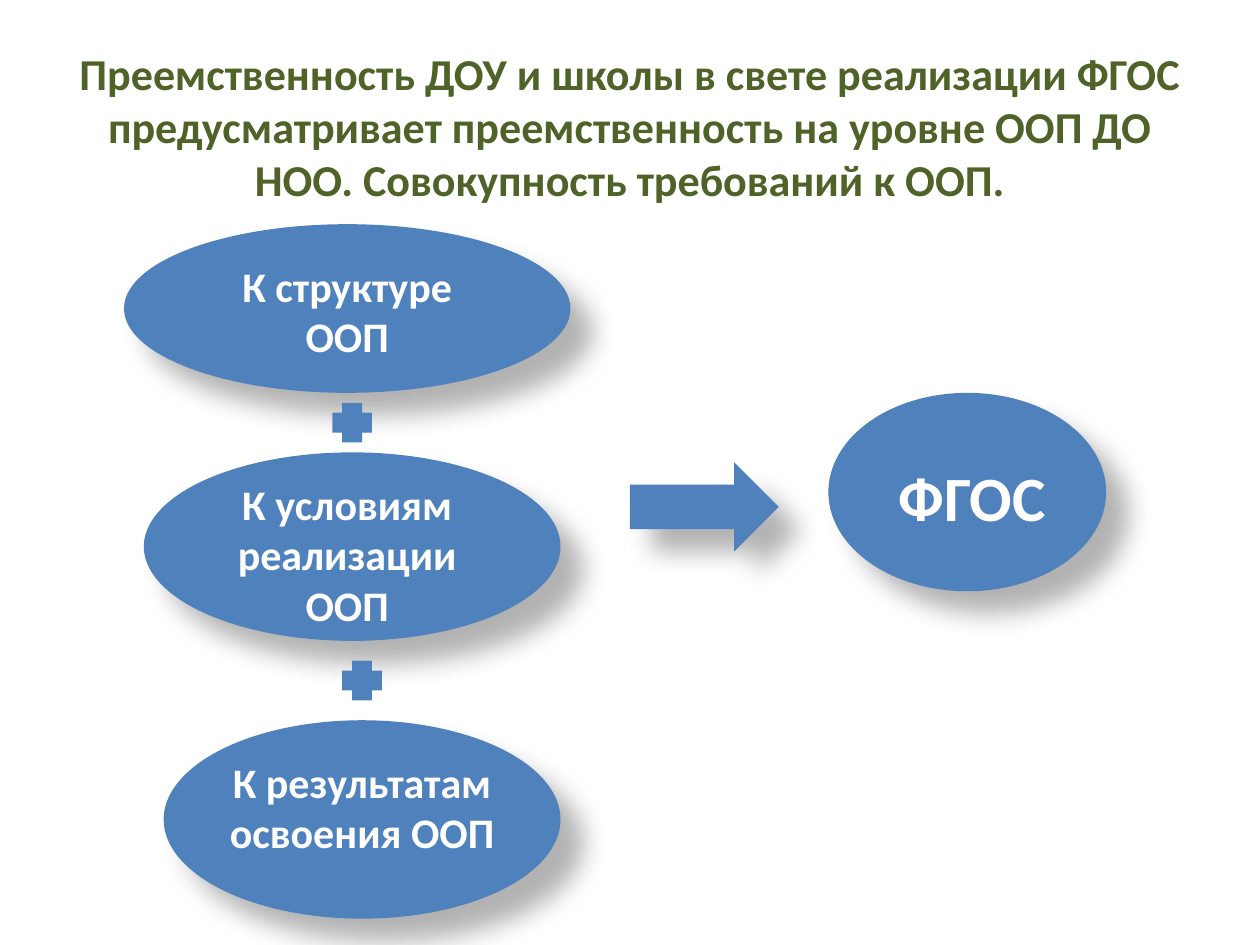
import pptx
import pptx.util
import pptx.dml.color
import pptx.enum.shapes
import pptx.enum.text
import pptx.oxml
import pptx.oxml.ns

Cm, Pt = pptx.util.Cm, pptx.util.Pt
RGBColor = pptx.dml.color.RGBColor
MSO_SHAPE = pptx.enum.shapes.MSO_SHAPE
MSO_ANCHOR = pptx.enum.text.MSO_ANCHOR
MSO_AUTO_SIZE = pptx.enum.text.MSO_AUTO_SIZE
PP_ALIGN = pptx.enum.text.PP_ALIGN

BLUE = RGBColor(0x4F, 0x81, 0xBD)
GREEN = RGBColor(0x4F, 0x62, 0x28)
WHITE = RGBColor(0xFF, 0xFF, 0xFF)
FONT = "Calibri"

# Blur 15 pt, distance 18 pt, towards the lower right
SHADOW = (
    f'<a:effectLst {pptx.oxml.ns.nsdecls("a")}>'
    '<a:outerShdw blurRad="190500" dist="228600" dir="2700000" algn="ctr" rotWithShape="0">'
    '<a:srgbClr val="000000"><a:alpha val="30000"/></a:srgbClr>'
    '</a:outerShdw></a:effectLst>'
)


def write(tf, text, size, color):
    tf.word_wrap = True
    tf.text = text
    p = tf.paragraphs[0]
    p.alignment = PP_ALIGN.CENTER
    font = p.runs[0].font
    font.name, font.size, font.bold = FONT, Pt(size), True
    font.color.rgb = color


def add_figure(s, kind, left, top, width, height, shadow=True):
    sp = s.shapes.add_shape(kind, Cm(left), Cm(top), Cm(width), Cm(height))
    sp.shadow.inherit = False
    sp.fill.solid()
    sp.fill.fore_color.rgb = BLUE
    sp.line.fill.background()
    if shadow:
        effects = sp._element.spPr.find(pptx.oxml.ns.qn("a:effectLst"))
        effects.getparent().replace(effects, pptx.oxml.parse_xml(SHADOW))
    return sp


def add_label(s, text, left, top, width, height, size=24):
    tf = s.shapes.add_textbox(Cm(left), Cm(top), Cm(width), Cm(height)).text_frame
    write(tf, text, size, WHITE)
    tf.auto_size = MSO_AUTO_SIZE.SHAPE_TO_FIT_TEXT


def add_title(s, left, top, width, height):
    sp = s.shapes.title
    sp.left, sp.top, sp.width, sp.height = Cm(left), Cm(top), Cm(width), Cm(height)
    tf = sp.text_frame
    write(tf, "Преемственность ДОУ и школы в свете реализации ФГОС предусматривает "
              "преемственность на уровне ООП ДО НОО. Совокупность требований к ООП.",
          25.2, GREEN)
    tf.vertical_anchor = MSO_ANCHOR.MIDDLE
    tf.auto_size = MSO_AUTO_SIZE.NONE


def add_requirements(s, left, top):
    # Ellipse offset and size, then label offset and size
    items = [
        ("К структуре ООП", (0, 0, 9, 3.4), (0.6, 5.4, 2.31)),
        ("К условиям реализации ООП", (0.4, 4.6, 8.4, 3.8), (5, 5.4, 3.33)),
        ("К результатам освоения ООП", (0.8, 10, 8, 4), (10.6, 6, 2.31)),
    ]
    for text, (dx, dy, width, height), (label_dy, label_w, label_h) in items:
        add_figure(s, MSO_SHAPE.OVAL, left + dx, top + dy, width, height)
        add_label(s, text, left + 1.8, top + label_dy, label_w, label_h)
    # Plus signs between the ellipses
    for dx, dy in ((4.2, 3.6), (4.4, 8.8)):
        add_figure(s, MSO_SHAPE.CROSS, left + dx, top + dy, 0.8, 0.8, shadow=False)


def add_result(s, left, top):
    add_figure(s, MSO_SHAPE.RIGHT_ARROW, left, top + 1.4, 3, 1.8)
    add_figure(s, MSO_SHAPE.OVAL, left + 4, top, 5.6, 4)
    add_label(s, "ФГОС", left + 4.2, top + 1.2, 5.4, 1.8, size=36)


def main():
    prs = pptx.Presentation()
    prs.slide_width, prs.slide_height = Cm(25.4), Cm(19.05)
    s = prs.slides.add_slide(prs.slide_layouts[5])
    add_title(s, 1.27, 0.76, 22.86, 3.56)
    add_requirements(s, 2.5, 4.52)
    add_result(s, 12.7, 7.92)
    prs.save("out.pptx")


if __name__ == "__main__":
    main()
